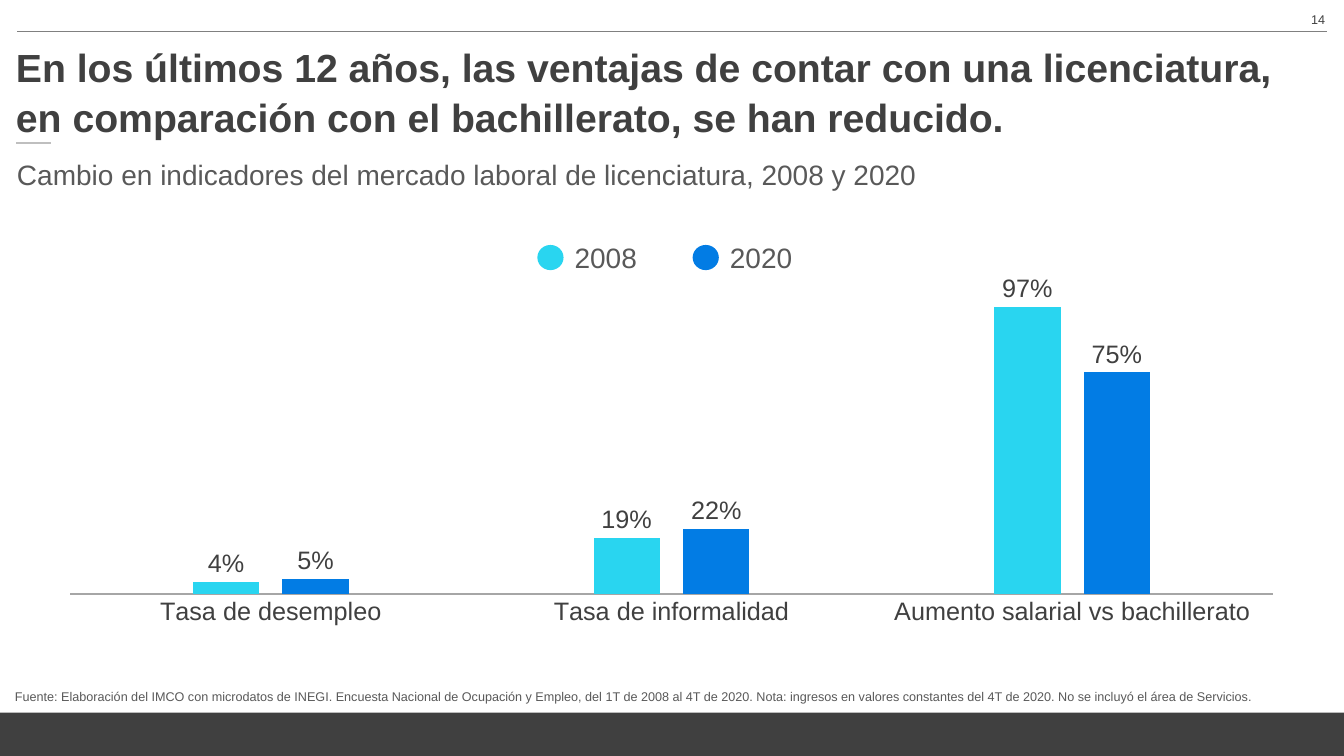
from lxml import etree
from pptx import Presentation
from pptx.chart.data import CategoryChartData
from pptx.dml.color import RGBColor
from pptx.enum.chart import XL_CHART_TYPE as ChartType, XL_LABEL_POSITION as LabelPosition, XL_TICK_MARK as TickMark
from pptx.enum.shapes import MSO_CONNECTOR as Connector, MSO_SHAPE as Shape
from pptx.enum.text import MSO_ANCHOR as Anchor, PP_ALIGN as Align
from pptx.oxml import parse_xml
from pptx.oxml.ns import nsdecls, qn
from pptx.util import Inches, Pt

FONT = "Arial"
WHITE = RGBColor(0xFF, 0xFF, 0xFF)
DARK = RGBColor(0x40, 0x40, 0x40)
TEXT_GRAY = RGBColor(0x59, 0x59, 0x59)
RULE_GRAY = RGBColor(0x80, 0x80, 0x80)
AXIS_GRAY = RGBColor(0xA6, 0xA6, 0xA6)
ACCENT_GRAY = RGBColor(0xBF, 0xBF, 0xBF)
CYAN = RGBColor(0x29, 0xD5, 0xF0)
BLUE = RGBColor(0x02, 0x7C, 0xE4)

CATEGORIES = ["Tasa de desempleo", "Tasa de informalidad", "Aumento salarial vs bachillerato"]
YEARS = [
    ("2008", CYAN, (0.04, 0.19, 0.97)),
    ("2020", BLUE, (0.05, 0.22, 0.75)),
]
TITLE = ("En los últimos 12 años, las ventajas de contar con una licenciatura, "
         "en comparación con el bachillerato, se han reducido.")
SUBTITLE = "Cambio en indicadores del mercado laboral de licenciatura, 2008 y 2020"
SOURCE = ("Fuente: Elaboración del IMCO con microdatos de INEGI. Encuesta Nacional de Ocupación y Empleo, "
          "del 1T de 2008 al 4T de 2020. Nota: ingresos en valores constantes del 4T de 2020. "
          "No se incluyó el área de Servicios.")


def add_text(slide, text, box, size, color=TEXT_GRAY, bold=False, align=Align.LEFT,
             anchor=Anchor.TOP, line_spacing=None):
    """Add a one-paragraph text box."""
    frame = slide.shapes.add_textbox(*map(Inches, box)).text_frame
    frame.word_wrap = True
    frame.vertical_anchor = anchor
    paragraph = frame.paragraphs[0]
    paragraph.alignment = align
    paragraph.line_spacing = line_spacing
    run = paragraph.add_run()
    run.text = text
    run.font.name = FONT
    run.font.size = Pt(size)
    run.font.bold = bold
    run.font.color.rgb = color


def add_filled_shape(slide, kind, box, color):
    """Add a flat shape without outline."""
    shape = slide.shapes.add_shape(kind, *map(Inches, box))
    shape.shadow.inherit = False
    shape.fill.solid()
    shape.fill.fore_color.rgb = color
    shape.line.fill.background()


def add_rule(slide, left, right, y, color, width):
    """Add a horizontal line."""
    line = slide.shapes.add_connector(Connector.STRAIGHT, Inches(left), Inches(y), Inches(right), Inches(y))
    line.line.color.rgb = color
    line.line.width = Pt(width)
    etree.SubElement(line._element.spPr, qn("a:effectLst"))


def set_plot_layout(chart, x, y, width, height):
    """Fix the inner plot area as fractions of the chart."""
    plot_area = chart._chartSpace.chart.plotArea
    for layout in plot_area.findall(qn("c:layout")):
        plot_area.remove(layout)
    sizes = "".join(f'<c:{tag} val="{value}"/>' for tag, value in zip("xywh", (x, y, width, height)))
    plot_area.insert(0, parse_xml(
        f'<c:layout {nsdecls("c")}><c:manualLayout><c:layoutTarget val="inner"/>'
        f'<c:xMode val="edge"/><c:yMode val="edge"/>{sizes}</c:manualLayout></c:layout>'))


def add_indicator_chart(slide):
    """Add the clustered columns comparing both years."""
    data = CategoryChartData(number_format="0%")
    data.categories = CATEGORIES
    for year, _, values in YEARS:
        data.add_series(year, values)
    box = map(Inches, (0.45, 2.11, 12.42, 4.25))
    chart = slide.shapes.add_chart(ChartType.COLUMN_CLUSTERED, *box, data).chart
    chart.has_title = False
    chart.has_legend = False
    chart.font.name = FONT
    chart.font.size = Pt(18)
    chart.font.color.rgb = DARK
    set_plot_layout(chart, 0.02, 0.2, 0.96, 0.69)

    category_axis = chart.category_axis
    category_axis.major_tick_mark = TickMark.NONE
    category_axis.format.line.color.rgb = AXIS_GRAY
    category_axis.format.line.width = Pt(1)
    value_axis = chart.value_axis
    value_axis.minimum_scale = 0
    value_axis.maximum_scale = 1
    value_axis.has_major_gridlines = False
    value_axis.visible = False

    plot = chart.plots[0]
    plot.vary_by_categories = False
    plot.gap_width = 369
    plot.overlap = -35
    plot.has_data_labels = True
    labels = plot.data_labels
    labels.show_value = True
    labels.number_format = "0%"
    labels.number_format_is_linked = False
    labels.position = LabelPosition.OUTSIDE_END
    for series, (_, color, _) in zip(plot.series, YEARS):
        series.format.fill.solid()
        series.format.fill.fore_color.rgb = color


def add_legend(slide):
    """Add a dot and a label for each year."""
    for index, (year, color, _) in enumerate(YEARS):
        left = 5.33 + 1.54 * index
        add_filled_shape(slide, Shape.OVAL, (left, 2.43, 0.26, 0.25), color)
        add_text(slide, year, (left + 0.27, 2.33, 0.82, 0.44), 20, anchor=Anchor.BOTTOM)


def main():
    """Build and save the slide."""
    presentation = Presentation()
    presentation.slide_width = Inches(13.33)
    presentation.slide_height = Inches(7.5)
    slide = presentation.slides.add_slide(presentation.slide_layouts[6])
    slide.background.fill.solid()
    slide.background.fill.fore_color.rgb = WHITE

    add_filled_shape(slide, Shape.RECTANGLE, (0, 7.07, 13.33, 0.43), DARK)
    add_rule(slide, 0.17, 13.16, 0.31, RULE_GRAY, 0.75)
    add_text(slide, "14", (10.24, 0.07, 3, 0.4), 9, DARK, align=Align.RIGHT)
    add_text(slide, TITLE, (0.06, 0.36, 13.18, 0.6), 28, DARK, bold=True, line_spacing=1.05)
    add_text(slide, SOURCE, (0.05, 6.76, 12.99, 0.27), 9, anchor=Anchor.BOTTOM)
    add_indicator_chart(slide)
    add_legend(slide)
    add_text(slide, SUBTITLE, (0.07, 1.51, 9.37, 0.77), 20)
    add_rule(slide, 0.16, 0.51, 1.42, ACCENT_GRAY, 1.5)
    presentation.save("out.pptx")


if __name__ == "__main__":
    main()
